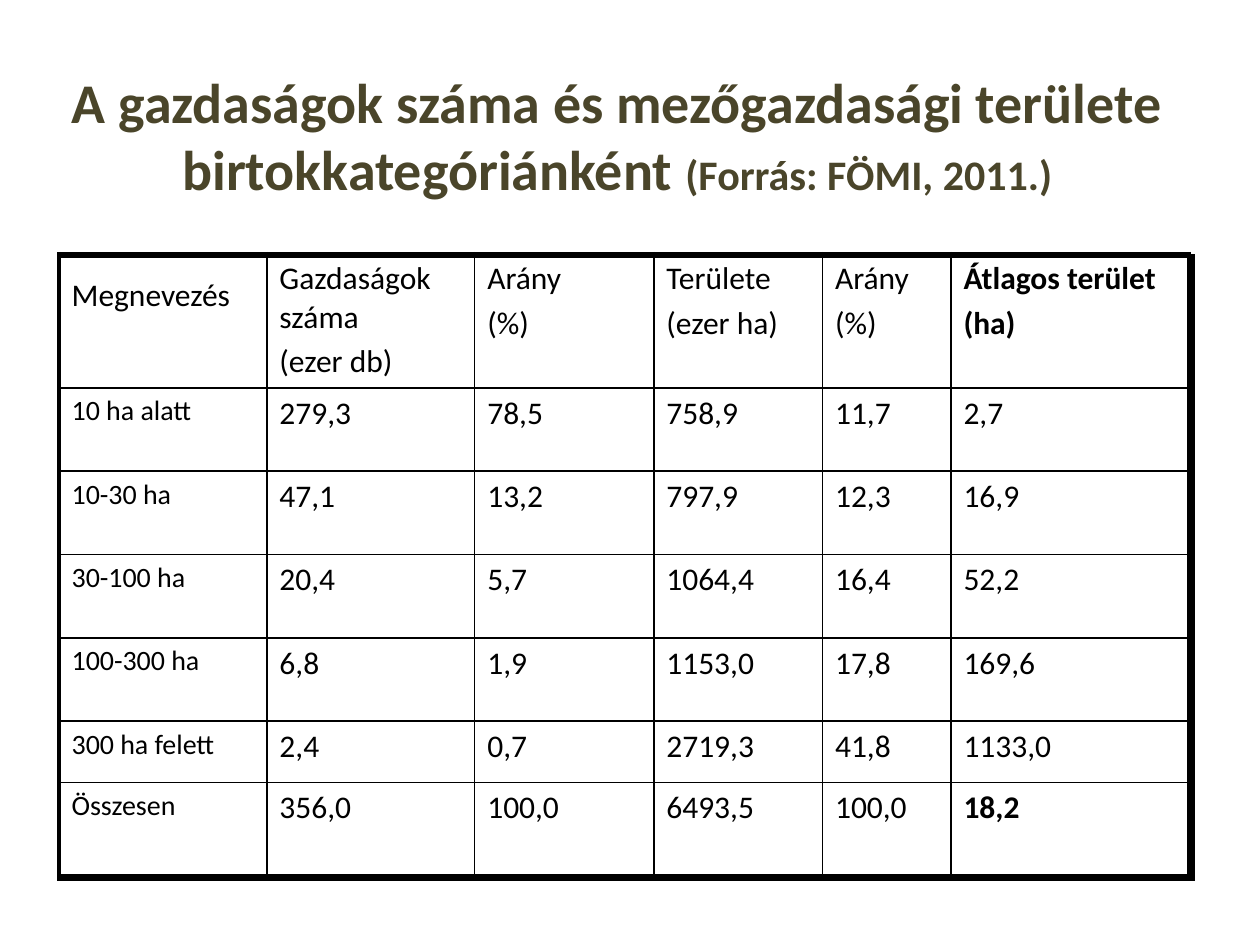
from pptx import Presentation
from pptx.dml.color import RGBColor
from pptx.enum.text import MSO_ANCHOR, PP_ALIGN
from pptx.oxml.ns import qn
from pptx.util import Cm, Pt
from lxml.etree import SubElement

THEME = {
    "font": "Calibri",
    "title": RGBColor(0x4A, 0x45, 0x2A),
    "ink": RGBColor(0, 0, 0),
    "title_size": 32,
    "source_size": 24,
    "label_size": 16,
    "value_size": 18,
    "spacer_size": 28,
    "outer_line": 2.25,
    "inner_line": 1,
}

TITLE = "A gazdaságok száma és mezőgazdasági területe birtokkategóriánként "
SOURCE = "(Forrás: FÖMI, 2011.)"
ROWS = [
    ["Megnevezés", "Gazdaságok száma\n(ezer db)", "Arány\n(%)",
     "Területe\n(ezer ha)", "Arány\n(%)", "Átlagos terület\n(ha)"],
    ["10 ha alatt", "279,3", "78,5", "758,9", "11,7", "2,7"],
    ["10-30 ha", "47,1", "13,2", "797,9", "12,3", "16,9"],
    ["30-100 ha", "20,4", "5,7", "1064,4", "16,4", "52,2"],
    ["100-300 ha", "6,8", "1,9", "1153,0", "17,8", "169,6"],
    ["300 ha felett", "2,4", "0,7", "2719,3", "41,8", "1133,0"],
    ["Összesen", "356,0", "100,0", "6493,5", "100,0", "18,2"],
]
COLUMN_WIDTHS = [4.19, 4.19, 3.61, 3.4, 2.59, 4.8]
ROW_HEIGHTS = [2.54, 1.68, 1.68, 1.68, 1.68, 1.24, 1.88]
BOLD_CELLS = {(0, 5), (6, 5)}


def style(run, size, color, bold=False):
    run.font.name = THEME["font"]
    run.font.size = Pt(size)
    run.font.bold = bold
    run.font.color.rgb = color


def set_borders(cell, widths):
    properties = cell._tc.get_or_add_tcPr()
    for side, width in zip("LRTB", widths):
        line = SubElement(properties, qn(f"a:ln{side}"), w=str(Pt(width)))
        fill = SubElement(line, qn("a:solidFill"))
        SubElement(fill, qn("a:srgbClr"), val=str(THEME["ink"]))


def add_grid(slide, left, top, widths, heights):
    grid = slide.shapes.add_table(
        len(heights), len(widths), Cm(left), Cm(top),
        Cm(sum(widths)), Cm(sum(heights))).table
    grid.first_row = grid.horz_banding = False
    for column, width in zip(grid.columns, widths):
        column.width = Cm(width)
    for row, height in zip(grid.rows, heights):
        row.height = Cm(height)
    last_row, last_column = len(heights) - 1, len(widths) - 1
    for r, row in enumerate(grid.rows):
        for c, cell in enumerate(row.cells):
            on_edge = (c == 0, c == last_column, r == 0, r == last_row)
            set_borders(cell, [THEME["outer_line" if edge else "inner_line"]
                               for edge in on_edge])
            cell.fill.background()
    return grid


def add_title(slide):
    title = slide.shapes.title
    title.left, title.top, title.width, title.height = (
        Cm(0), Cm(1.12), Cm(24.89), Cm(3.2))
    title.text_frame.vertical_anchor = MSO_ANCHOR.MIDDLE
    heading = title.text_frame.paragraphs[0]
    heading.alignment = PP_ALIGN.CENTER
    for words, size in ((TITLE, "title_size"), (SOURCE, "source_size")):
        run = heading.add_run()
        run.text = words
        style(run, THEME[size], THEME["title"], True)


def fill_grid(grid):
    for r, row in enumerate(ROWS):
        for c, words in enumerate(row):
            size = THEME["label_size" if r and c == 0 else "value_size"]
            frame = grid.cell(r, c).text_frame
            frame.text = words
            for index, paragraph in enumerate(frame.paragraphs):
                if index:
                    paragraph.space_before = Pt(0.2 * size)
                style(paragraph.runs[0], size, THEME["ink"],
                      (r, c) in BOLD_CELLS)
    spacer = grid.cell(0, 0).text_frame.paragraphs[0].add_run()
    spacer.text = " "
    style(spacer, THEME["spacer_size"], THEME["ink"])


def main():
    presentation = Presentation()
    presentation.slide_width, presentation.slide_height = Cm(25.4), Cm(19.05)
    slide = presentation.slides.add_slide(presentation.slide_layouts[5])
    add_title(slide)
    add_grid(slide, 1.19, 5.16, [22.86], [12.57])
    fill_grid(add_grid(slide, 1.19, 5.11, COLUMN_WIDTHS, ROW_HEIGHTS))
    presentation.save("out.pptx")


if __name__ == "__main__":
    main()
